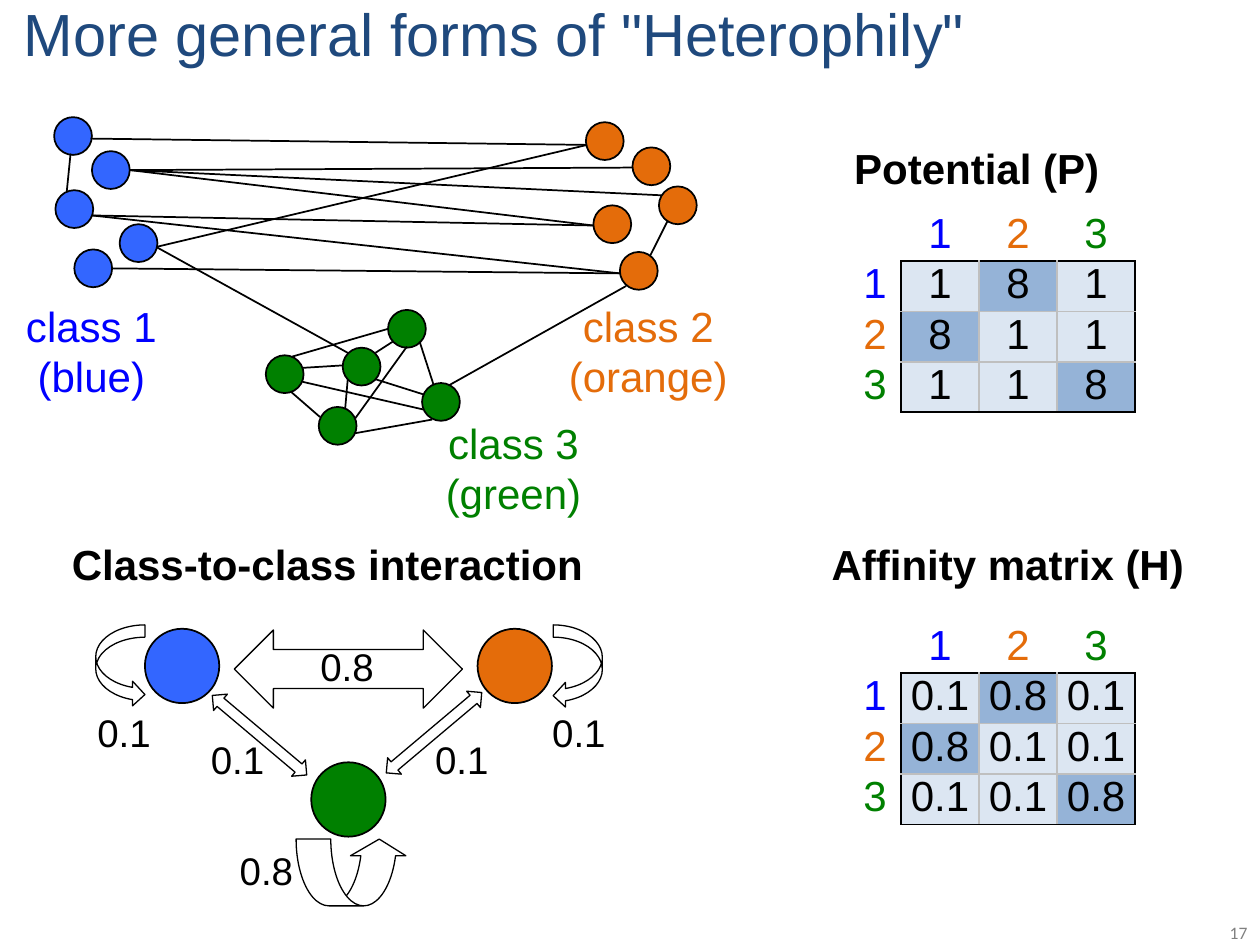
from lxml import etree
from pptx import Presentation
from pptx.dml.color import RGBColor
from pptx.enum.shapes import MSO_CONNECTOR, MSO_SHAPE
from pptx.enum.text import MSO_ANCHOR, PP_ALIGN
from pptx.oxml.ns import qn
from pptx.util import Inches, Pt

BLACK = RGBColor(0x00, 0x00, 0x00)
WHITE = RGBColor(0xFF, 0xFF, 0xFF)
NAVY = RGBColor(0x1F, 0x49, 0x7D)
GRAY = RGBColor(0x80, 0x80, 0x80)
GRID = RGBColor(0xBF, 0xBF, 0xBF)
PALE = RGBColor(0xDC, 0xE6, 0xF2)
STRONG = RGBColor(0x95, 0xB3, 0xD7)
BLUE = RGBColor(0x33, 0x66, 0xFF)
BLUE_TEXT = RGBColor(0x00, 0x00, 0xFF)
ORANGE = RGBColor(0xE4, 0x6C, 0x0A)
GREEN = RGBColor(0x00, 0x80, 0x00)
CLASS_COLORS = [BLUE_TEXT, ORANGE, GREEN]

# Network: left and top of every node, by class
NODE_SIZE = 0.3
NODES = [
    (BLUE, [(0.44, 1.51), (0.95, 1.78), (0.43, 0.93), (0.73, 1.2), (0.59, 1.98)]),
    (GREEN, [(2.53, 3.23), (3.35, 3.04), (3.08, 2.46), (2.11, 2.82), (2.72, 2.76)]),
    (ORANGE, [(4.65, 0.97), (5.23, 1.48), (5.02, 1.17), (4.71, 1.63), (4.92, 2)]),
]
EDGES = [
    # Within green
    (2.81, 3.44, 3.43, 3.33), (3.44, 3.05, 3.33, 2.71), (2.32, 2.83, 3.08, 2.61),
    (2.54, 3.31, 2.31, 3.11), (2.74, 3.24, 2.76, 3.01), (2.98, 3.01, 3.36, 3.13),
    (2.98, 2.8, 3.12, 2.71), (2.72, 2.9, 2.4, 2.92), (3.36, 3.25, 2.4, 3.03),
    (2.82, 3.32, 3.23, 2.75),
    # Blue to orange
    (0.73, 1.71, 4.92, 2.17), (0.89, 2.13, 4.92, 2.17), (1.24, 1.96, 4.66, 1.15),
    (1.03, 1.35, 4.71, 1.79), (1.03, 1.35, 5.02, 1.33), (1.03, 1.35, 5.25, 1.55),
    (0.73, 1.71, 4.71, 1.79), (0.72, 1.1, 4.66, 1.15),
    # To green, within blue, within orange
    (1.24, 1.96, 2.76, 2.8), (4.97, 2.27, 3.56, 3.06), (0.56, 1.22, 0.53, 1.52),
    (5.3, 1.75, 5.16, 2.03),
]
CLASS_LABELS = [
    (["class 1", "(blue)"], (0.2, 2.46, 1.05, 0.74)),
    (["class 2", "(orange)"], (4.51, 2.46, 1.27, 0.74)),
    (["class 3", "(green)"], (3.53, 3.39, 1.09, 0.74)),
]

# Class-to-class interaction
CLASS_SIZE = 0.59
CLASS_CIRCLES = [(ORANGE, 3.79, 4.99), (GREEN, 2.47, 6.05), (BLUE, 1.15, 4.99)]
# Preset, box, rotation, fill, adjustments
ARROWS = [
    (MSO_SHAPE.LEFT_RIGHT_ARROW, (1.86, 5, 1.81, 0.62), 0, WHITE, ()),
    (MSO_SHAPE.LEFT_RIGHT_ARROW, (1.57, 5.75, 0.98, 0.17), 40.1, WHITE, ()),
    (MSO_SHAPE.LEFT_RIGHT_ARROW, (2.95, 5.73, 0.99, 0.17), 319.9, WHITE, ()),
    (MSO_SHAPE.CURVED_LEFT_ARROW, (4.39, 4.96, 0.39, 0.66), 0, None, ()),
    (MSO_SHAPE.CURVED_RIGHT_ARROW, (0.76, 4.96, 0.39, 0.65), 0, None, ()),
    (MSO_SHAPE.CURVED_UP_ARROW, (2.35, 6.66, 0.88, 0.53), 0, None, (0.52, 0.83, 0.25)),
]
WEIGHTS = [("0.8", 2.54, 5.1), ("0.1", 3.45, 5.84), ("0.1", 1.67, 5.84),
           ("0.8", 1.9, 6.72), ("0.1", 0.77, 5.63), ("0.1", 4.38, 5.63)]

HEADINGS = [
    ("Class-to-class interaction", (0.57, 4.35, 4.1, 0.34)),
    ("Potential (P)", (6.78, 1.21, 1.96, 0.34)),
    ("Affinity matrix (H)", (6.6, 4.35, 2.82, 0.34)),
]

# Matrices: top, usual value, strong value
MATRICES = [(1.67, "1", "8"), (4.94, "0.1", "0.8")]
STRONG_CELLS = {(1, 2), (2, 1), (3, 3)}
MATRIX_LEFT, LABEL_WIDTH, VALUE_WIDTH, ROW_HEIGHT = 6.74, 0.41, 0.62, 0.4


def format_paragraph(paragraph, text, size=24, color=BLACK, font="Arial", bold=False,
                     align=PP_ALIGN.CENTER, line_spacing=None, space_after=0):
    paragraph.alignment = align
    paragraph.space_after = Pt(space_after)
    if line_spacing:
        paragraph.line_spacing = line_spacing
    run = paragraph.add_run()
    run.text = text
    run.font.size = Pt(size)
    run.font.name = font
    run.font.bold = bold
    run.font.color.rgb = color


def add_text(slide, lines, box, **text_format):
    frame = slide.shapes.add_textbox(*map(Inches, box)).text_frame
    frame.margin_left = frame.margin_right = frame.margin_top = frame.margin_bottom = 0
    frame.word_wrap = False
    for index, line in enumerate(lines):
        paragraph = frame.add_paragraph() if index else frame.paragraphs[0]
        format_paragraph(paragraph, line, **text_format)


def add_shape(slide, preset, box, fill, line_width=1):
    shape = slide.shapes.add_shape(preset, *map(Inches, box))
    shape.shadow.inherit = False
    if fill is None:
        shape.fill.background()
    else:
        shape.fill.solid()
        shape.fill.fore_color.rgb = fill
    shape.line.color.rgb = BLACK
    shape.line.width = Pt(line_width)
    return shape


def add_edge(slide, ends):
    edge = slide.shapes.add_connector(MSO_CONNECTOR.STRAIGHT, *map(Inches, ends))
    edge.line.color.rgb = BLACK
    edge.line.width = Pt(1)
    etree.SubElement(edge.element.spPr, qn("a:effectLst"))


def set_border(cell, tag, color):
    properties = cell._tc.get_or_add_tcPr()
    border = etree.SubElement(properties, qn(tag), w=str(Pt(1)))
    fill = etree.SubElement(border, qn("a:solidFill"))
    etree.SubElement(fill, qn("a:srgbClr"), val=str(color))


def border_color(line, other):
    """Colour of grid line 0 to 4, along the row or column numbered other."""
    if line == 0 or other == 0:
        return WHITE
    return BLACK if line in (1, 4) else GRID


def add_matrix(slide, top, usual, strong):
    width = LABEL_WIDTH + 3 * VALUE_WIDTH
    table = slide.shapes.add_table(4, 4, Inches(MATRIX_LEFT), Inches(top),
                                   Inches(width), Inches(4 * ROW_HEIGHT)).table
    for index in range(4):
        table.columns[index].width = Inches(VALUE_WIDTH if index else LABEL_WIDTH)
        table.rows[index].height = Inches(ROW_HEIGHT)
    for row in range(4):
        for column in range(4):
            cell = table.cell(row, column)
            cell.margin_left = cell.margin_right = cell.margin_top = cell.margin_bottom = 0
            cell.vertical_anchor = MSO_ANCHOR.TOP
            set_border(cell, "a:lnL", border_color(column, row))
            set_border(cell, "a:lnR", border_color(column + 1, row))
            set_border(cell, "a:lnT", border_color(row, column))
            set_border(cell, "a:lnB", border_color(row + 1, column))
            is_strong = (row, column) in STRONG_CELLS
            cell.fill.solid()
            if row and column:
                cell.fill.fore_color.rgb = STRONG if is_strong else PALE
                text, color = (strong if is_strong else usual), BLACK
            else:
                cell.fill.fore_color.rgb = WHITE
                number = row + column
                text = str(number) if number else ""
                color = CLASS_COLORS[number - 1] if number else BLACK
            format_paragraph(cell.text_frame.paragraphs[0], text, color=color)


def main():
    presentation = Presentation()
    presentation.slide_width, presentation.slide_height = Inches(10), Inches(7.5)
    slide = presentation.slides.add_slide(presentation.slide_layouts[6])

    # Title and slide number
    add_text(slide, ["More general forms of \"Heterophily\""], (0.19, 0.06, 7.55, 0.5),
             size=34, color=NAVY, align=PP_ALIGN.LEFT, line_spacing=0.85)
    add_text(slide, ["17"], (9.76, 7.32, 0.16, 0.17), size=10, color=GRAY,
             font="Calibri", align=PP_ALIGN.LEFT)

    # Network
    for color, places in NODES:
        for left, top in places:
            add_shape(slide, MSO_SHAPE.OVAL, (left, top, NODE_SIZE, NODE_SIZE), color)
    for ends in EDGES:
        add_edge(slide, ends)
    for (lines, box), color in zip(CLASS_LABELS, CLASS_COLORS):
        add_text(slide, lines, box, color=color, line_spacing=0.8, space_after=5.5)

    # Class-to-class interaction
    for color, left, top in CLASS_CIRCLES:
        add_shape(slide, MSO_SHAPE.OVAL, (left, top, CLASS_SIZE, CLASS_SIZE), color)
    for preset, box, rotation, fill, adjustments in ARROWS:
        arrow = add_shape(slide, preset, box, fill, line_width=0.75)
        arrow.rotation = rotation
        for index, value in enumerate(adjustments):
            arrow.adjustments[index] = value
    for weight, left, top in WEIGHTS:
        add_text(slide, [weight], (left, top, 0.43, 0.37), size=22)

    # Headings and matrices
    for heading, box in HEADINGS:
        add_text(slide, [heading], box, bold=True, align=PP_ALIGN.LEFT, line_spacing=0.8)
    for matrix in MATRICES:
        add_matrix(slide, *matrix)

    presentation.save("out.pptx")


if __name__ == "__main__":
    main()
